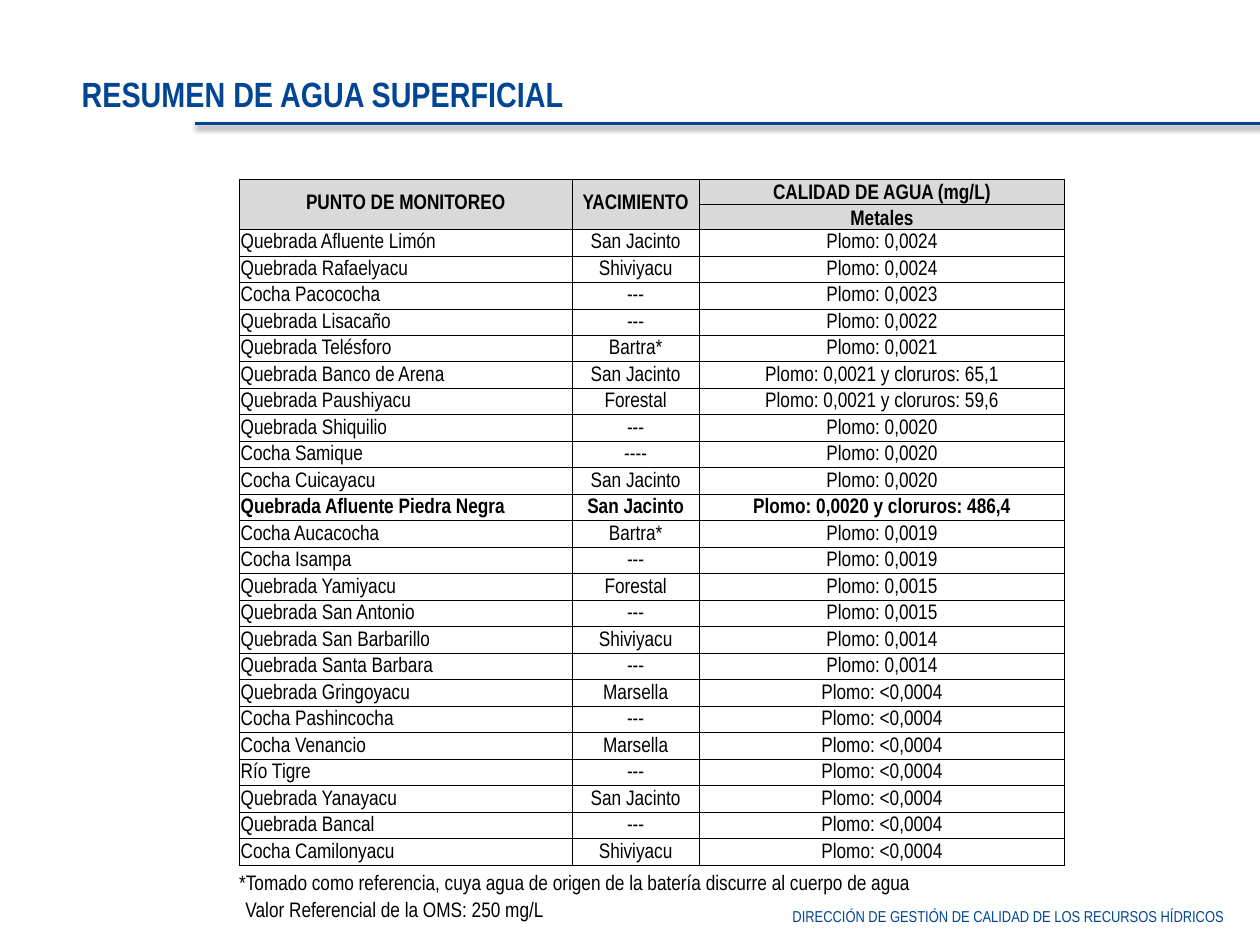
from lxml import etree
from pptx import Presentation
from pptx.dml.color import RGBColor
from pptx.enum.shapes import MSO_CONNECTOR
from pptx.enum.text import MSO_ANCHOR, MSO_AUTO_SIZE, PP_ALIGN
from pptx.oxml import parse_xml
from pptx.oxml.ns import nsdecls, qn
from pptx.util import Inches, Pt

LEFT, CENTER, RIGHT = PP_ALIGN.LEFT, PP_ALIGN.CENTER, PP_ALIGN.RIGHT
MIDDLE, BOTTOM = MSO_ANCHOR.MIDDLE, MSO_ANCHOR.BOTTOM
FIT_SHAPE = MSO_AUTO_SIZE.SHAPE_TO_FIT_TEXT
FONT = "Arial Narrow"
BLUE, BLACK, GRAY = "004694", "000000", "D9D9D9"


def rgb(value):
    return RGBColor.from_string(value)


def write(tf, text, size, color, bold=False, align=LEFT):
    p = tf.paragraphs[0]
    p.text = text
    p.alignment = align
    p.font.name = FONT
    p.font.size = Pt(size)
    p.font.bold = bold
    p.font.color.rgb = rgb(color)


prs = Presentation()
prs.slide_width, prs.slide_height = Inches(10), Inches(7.5)
s = prs.slides.add_slide(prs.slide_layouts[6])

# Title, footer and notes under the table
texts = [
    ("DIRECCIÓN DE GESTIÓN DE CALIDAD DE LOS RECURSOS HÍDRICOS",
     5.17, 7.15, 4.64, 0.25, 9, BLUE, False, RIGHT, True),
    ("RESUMEN DE AGUA SUPERFICIAL",
     0.55, 0.53, 8.63, 0.44, 20, BLUE, True, LEFT, True),
    ("*Tomado como referencia, cuya agua de origen de la batería discurre al cuerpo de agua",
     1.8, 6.85, 5.59, 0.3, 12, BLACK, False, LEFT, False),
    ("Valor Referencial de la OMS: 250 mg/L",
     1.85, 7.07, 2.6, 0.3, 12, BLACK, False, LEFT, False),
]
for text, x, y, w, h, size, color, bold, align, wrap in texts:
    tf = s.shapes.add_textbox(Inches(x), Inches(y), Inches(w), Inches(h)).text_frame
    tf.word_wrap = wrap
    tf.auto_size = FIT_SHAPE
    write(tf, text, size, color, bold, align)

# Rule under the title, with a soft shadow
rule = s.shapes.add_connector(MSO_CONNECTOR.STRAIGHT, Inches(1.55), Inches(0.98),
                              Inches(10.12), Inches(0.98))
rule.line.color.rgb = rgb(BLUE)
rule.line.width = Pt(2)
effects = etree.SubElement(rule._element.spPr, qn("a:effectLst"))
effects.append(parse_xml(
    f'<a:outerShdw {nsdecls("a")} blurRad="{Pt(3.1)}" dist="{Pt(1.6)}" dir="5400000" '
    f'rotWithShape="0"><a:srgbClr val="{BLACK}"><a:alpha val="38000"/></a:srgbClr>'
    '</a:outerShdw>'))

# Table
headers = [
    ("PUNTO DE MONITOREO", "YACIMIENTO", "CALIDAD DE AGUA (mg/L)"),
    ("", "", "Metales"),
]
points = [
    ("Quebrada Afluente Limón", "San Jacinto", "0,0024"),
    ("Quebrada Rafaelyacu", "Shiviyacu", "0,0024"),
    ("Cocha Pacococha", "---", "0,0023"),
    ("Quebrada Lisacaño", "---", "0,0022"),
    ("Quebrada Telésforo", "Bartra*", "0,0021"),
    ("Quebrada Banco de Arena", "San Jacinto", "0,0021 y cloruros: 65,1"),
    ("Quebrada Paushiyacu", "Forestal", "0,0021 y cloruros: 59,6"),
    ("Quebrada Shiquilio", "---", "0,0020"),
    ("Cocha Samique", "----", "0,0020"),
    ("Cocha Cuicayacu", "San Jacinto", "0,0020"),
    ("Quebrada Afluente Piedra Negra", "San Jacinto", "0,0020 y cloruros: 486,4"),
    ("Cocha Aucacocha", "Bartra*", "0,0019"),
    ("Cocha Isampa", "---", "0,0019"),
    ("Quebrada Yamiyacu", "Forestal", "0,0015"),
    ("Quebrada San Antonio", "---", "0,0015"),
    ("Quebrada San Barbarillo", "Shiviyacu", "0,0014"),
    ("Quebrada Santa Barbara", "---", "0,0014"),
    ("Quebrada Gringoyacu", "Marsella", "<0,0004"),
    ("Cocha Pashincocha", "---", "<0,0004"),
    ("Cocha Venancio", "Marsella", "<0,0004"),
    ("Río Tigre", "---", "<0,0004"),
    ("Quebrada Yanayacu", "San Jacinto", "<0,0004"),
    ("Quebrada Bancal", "---", "<0,0004"),
    ("Cocha Camilonyacu", "Shiviyacu", "<0,0004"),
]
OVER_LIMIT = "Quebrada Afluente Piedra Negra"
rows = headers + [(point, field, f"Plomo: {metals}") for point, field, metals in points]

table = s.shapes.add_table(len(rows), 3, Inches(1.9), Inches(1.42),
                           Inches(6.55), Inches(5.45)).table
table.first_row = table.horz_banding = False
for column, width in zip(table.columns, (2.64, 1.01, 2.9)):
    column.width = Inches(width)

for i, row in enumerate(rows):
    header = i < len(headers)
    table.rows[i].height = Inches(0.2 if header else 0.21)
    for j, text in enumerate(row):
        cell = table.cell(i, j)
        inset = Inches(0 if header else 0.01)
        cell.margin_left = cell.margin_right = cell.margin_top = inset
        cell.margin_bottom = 0
        cell.vertical_anchor = BOTTOM if header and j == 2 else MIDDLE
        write(cell.text_frame, text, 12, BLACK, header or row[0] == OVER_LIMIT,
              CENTER if header or j else LEFT)
        tcPr = cell._tc.get_or_add_tcPr()
        for side in ("lnL", "lnR", "lnT", "lnB"):
            tcPr.append(parse_xml(
                f'<a:{side} {nsdecls("a")} w="{Pt(0.5)}"><a:solidFill>'
                f'<a:srgbClr val="{BLACK}"/></a:solidFill></a:{side}>'))
        if header:
            cell.fill.solid()
            cell.fill.fore_color.rgb = rgb(GRAY)
        else:
            cell.fill.background()

for j in range(2):
    table.cell(0, j).merge(table.cell(1, j))

prs.save("out.pptx")
